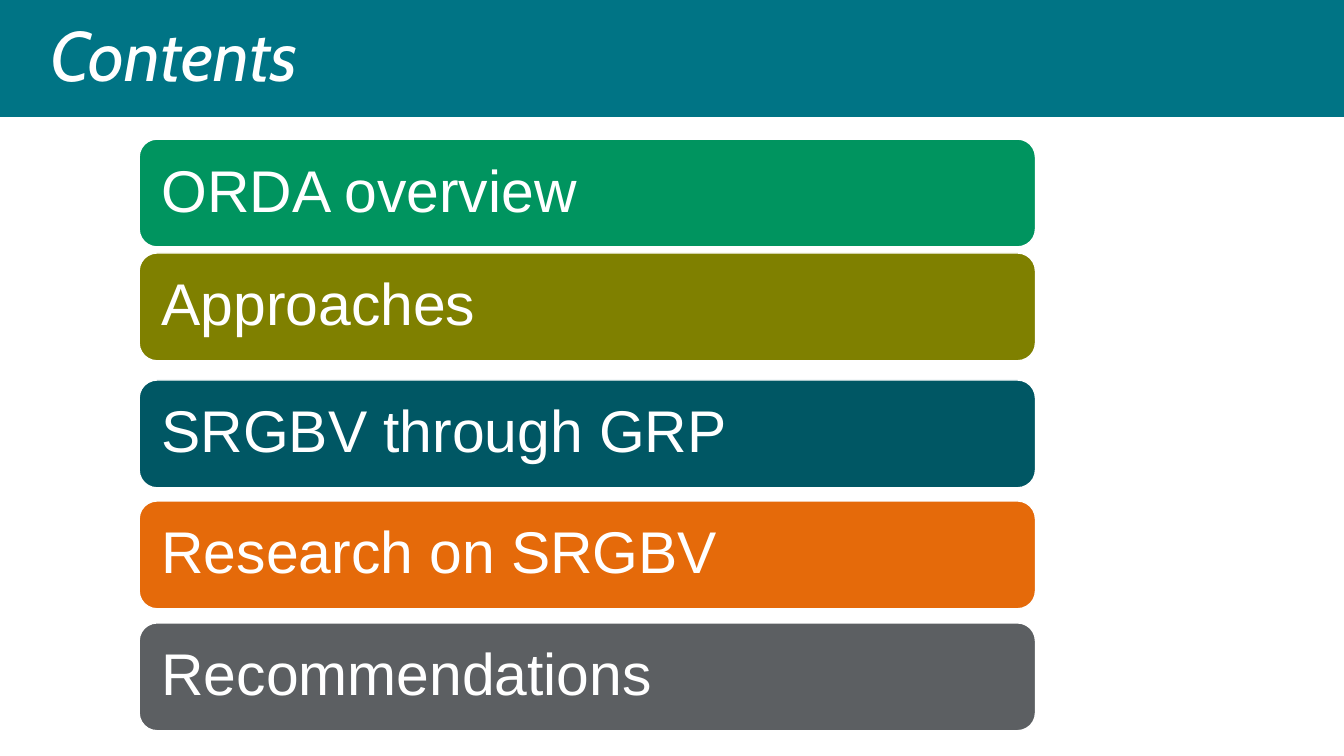
from typing import NamedTuple

from pptx import Presentation
from pptx.dml import color as c
from pptx.enum import shapes as s, text as t
from pptx.util import Inches, Pt

WHITE = "FFFFFF"


class Topic(NamedTuple):
    label: str
    top: float
    fill: str


TOPICS = [
    Topic("ORDA overview", 1.38, "00945F"),
    Topic("Approaches", 2.51, "7F8000"),
    Topic("SRGBV through GRP", 3.77, "005764"),
    Topic("Research on SRGBV", 4.97, "E56A0A"),
    Topic("Recommendations", 6.18, "5C5F62"),
]


def paint(target, shade: str) -> None:
    """Give a fill a solid colour."""
    target.solid()
    target.fore_color.rgb = c.RGBColor.from_string(shade)


def add_block(slide, kind, left: float, top: float, width: float,
              height: float, shade: str):
    block = slide.shapes.add_shape(
        kind, Inches(left), Inches(top), Inches(width), Inches(height))
    block.shadow.inherit = False
    paint(block.fill, shade)
    return block


def write(shape, words: str, font: str, size: int, inset: float,
          italic: bool = False) -> None:
    frame = shape.text_frame
    frame.text = words
    frame.word_wrap = True
    frame.vertical_anchor = t.MSO_ANCHOR.MIDDLE
    frame.margin_left = frame.margin_right = Inches(inset)
    frame.margin_top = frame.margin_bottom = Inches(min(inset, 0.17))
    line = frame.paragraphs[0]
    line.alignment = t.PP_ALIGN.LEFT
    line.line_spacing = 0.9
    run = line.runs[0]
    run.font.name = font
    run.font.size = Pt(size)
    run.font.italic = italic
    paint(run.font.fill, WHITE)


def add_topic(slide, topic: Topic) -> None:
    bar = add_block(slide, s.MSO_SHAPE.ROUNDED_RECTANGLE,
                    1.38, topic.top, 8.89, 1.07, topic.fill)
    paint(bar.line.fill, WHITE)
    bar.line.width = Pt(1)
    write(bar, topic.label, "Arial", 42, 0.17)


def main() -> None:
    deck = Presentation()
    deck.slide_width, deck.slide_height = Inches(13.33), Inches(7.5)
    slide = deck.slides.add_slide(deck.slide_layouts[6])

    # Title band
    band = add_block(slide, s.MSO_SHAPE.RECTANGLE, 0, 0, 13.33, 1.16, "007485")
    band.line.fill.background()
    title = slide.shapes.add_textbox(
        Inches(0.4), Inches(0.23), Inches(9.4), Inches(0.7))
    write(title, "Contents", "Cabin", 50, 0.1, italic=True)

    # Topic bars
    for topic in TOPICS:
        add_topic(slide, topic)

    deck.save("out.pptx")


if __name__ == "__main__":
    main()
